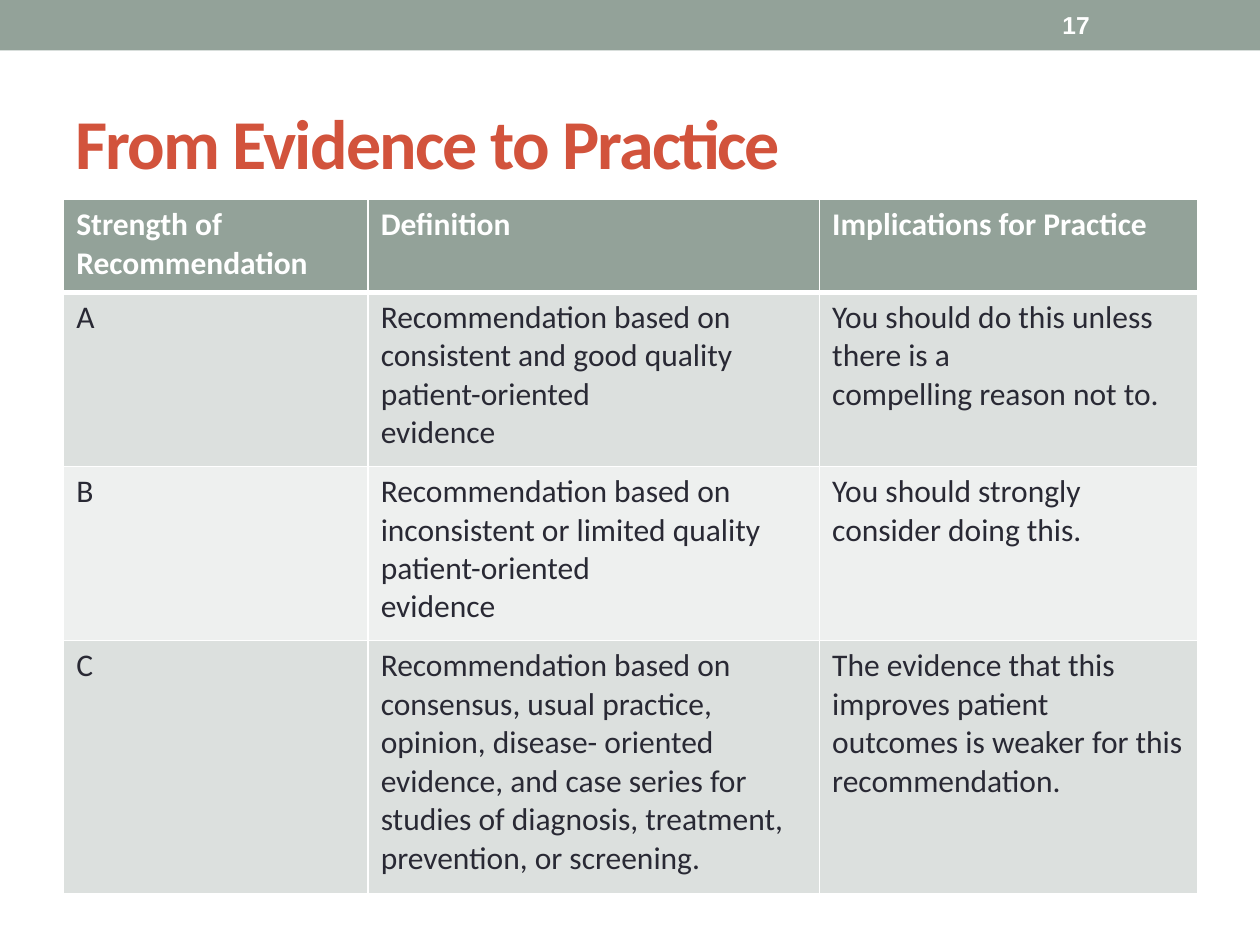
from lxml.etree import SubElement
from pptx import Presentation
from pptx.dml.color import RGBColor
from pptx.enum.shapes import MSO_SHAPE
from pptx.enum.text import MSO_ANCHOR
from pptx.oxml.ns import qn
from pptx.util import Pt

COLORS = {
    "sage": "93A299",
    "title": "D2533C",
    "text": "292934",
    "white": "FFFFFF",
    "odd_row": "DCE0DE",
    "even_row": "EEF0EF",
}
COLUMN_WIDTHS = [174, 258, 216]
ROW_HEIGHTS = [53, 99.5, 99.5, 144.5]
ROWS = [
    [["Strength of Recommendation"], ["Definition"], ["Implications for Practice"]],
    [
        ["A"],
        ["Recommendation based on consistent and good quality patient-oriented", "evidence"],
        ["You should do this unless there is a", "compelling reason not to."],
    ],
    [
        ["B"],
        ["Recommendation based on inconsistent or limited quality patient-oriented", "evidence"],
        ["You should strongly consider doing this."],
    ],
    [
        ["C"],
        [
            "Recommendation based on consensus, usual practice, opinion, disease- oriented",
            "evidence, and case series for studies of diagnosis, treatment,",
            "prevention, or screening.",
        ],
        [
            "The evidence that this improves patient",
            "outcomes is weaker for this",
            "recommendation.",
        ],
    ],
]


def color(name):
    return RGBColor.from_string(COLORS[name])


def add_run(paragraph, text, font_name, size, color_name, bold=False):
    run = paragraph.add_run()
    run.text = text
    run.font.name = font_name
    run.font.size = Pt(size)
    run.font.bold = bold
    run.font.color.rgb = color(color_name)
    return run


def add_text(slide, box, *run_format):
    shape = slide.shapes.add_textbox(*map(Pt, box))
    frame = shape.text_frame
    frame.word_wrap = True
    frame.vertical_anchor = MSO_ANCHOR.MIDDLE
    return add_run(frame.paragraphs[0], *run_format)


def add_header_band(slide, box):
    left, top, width, height = box
    band = slide.shapes.add_shape(MSO_SHAPE.RECTANGLE, *map(Pt, box))
    band.shadow.inherit = False
    band.fill.solid()
    band.fill.fore_color.rgb = color("sage")
    band.line.fill.background()
    number_box = (left + width - 120, top + 1.4, 84, height - 2.8)
    add_text(slide, number_box, "17", "Arial", 14, "white", True)


def add_title(slide, box):
    run = add_text(slide, box, "From Evidence to Practice", "Calibri", 40, "title", True)
    run.font._element.set("spc", "-100")


def set_borders(cell, widths):
    properties = cell._tc.get_or_add_tcPr()
    for side, width in zip("LRTB", widths):
        line = SubElement(properties, qn(f"a:ln{side}"), w=str(Pt(width)))
        fill = SubElement(line, qn("a:solidFill"))
        SubElement(fill, qn("a:srgbClr"), val=COLORS["white"])


def fill_cell(cell, lines, row_index):
    is_header = row_index == 0
    set_borders(cell, (1, 1, 3 if row_index == 1 else 1, 3 if is_header else 1))
    cell.fill.solid()
    cell.fill.fore_color.rgb = color(
        "sage" if is_header else "odd_row" if row_index % 2 else "even_row"
    )
    frame = cell.text_frame
    for index, line in enumerate(lines):
        paragraph = frame.add_paragraph() if index else frame.paragraphs[0]
        add_run(paragraph, line, "Calibri", 18, "white" if is_header else "text", is_header)


def add_recommendation_table(slide, box):
    frame = slide.shapes.add_table(len(ROWS), len(COLUMN_WIDTHS), *map(Pt, box))
    table = frame.table
    for column, width in zip(table.columns, COLUMN_WIDTHS):
        column.width = Pt(width)
    for row_index, (row, height) in enumerate(zip(table.rows, ROW_HEIGHTS)):
        row.height = Pt(height)
        for cell, lines in zip(row.cells, ROWS[row_index]):
            fill_cell(cell, lines, row_index)


def main():
    presentation = Presentation()
    presentation.slide_width = Pt(720)
    presentation.slide_height = Pt(540)
    slide = presentation.slides.add_slide(presentation.slide_layouts[6])
    add_header_band(slide, (0, 0, 720, 28.8))
    add_title(slide, (36, 42, 648, 78))
    add_recommendation_table(slide, (36.4, 114, sum(COLUMN_WIDTHS), sum(ROW_HEIGHTS)))
    presentation.save("out.pptx")


if __name__ == "__main__":
    main()
